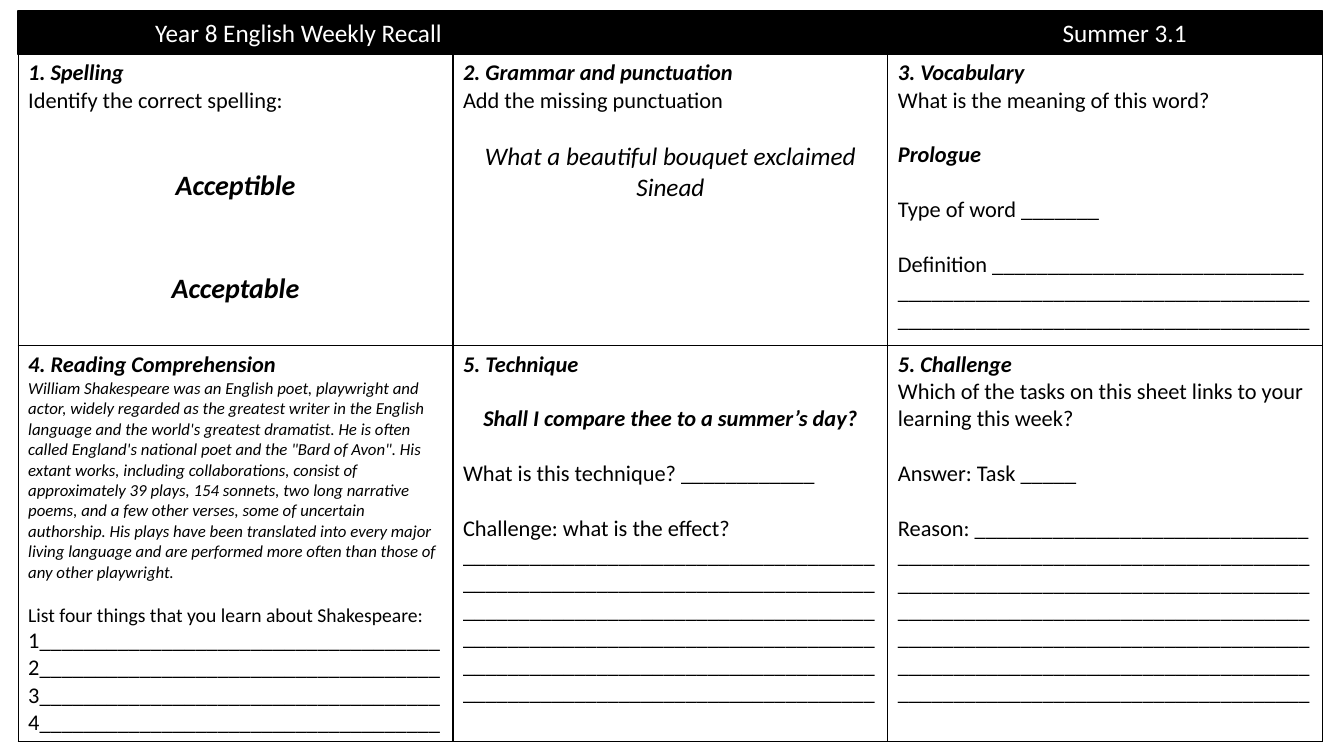
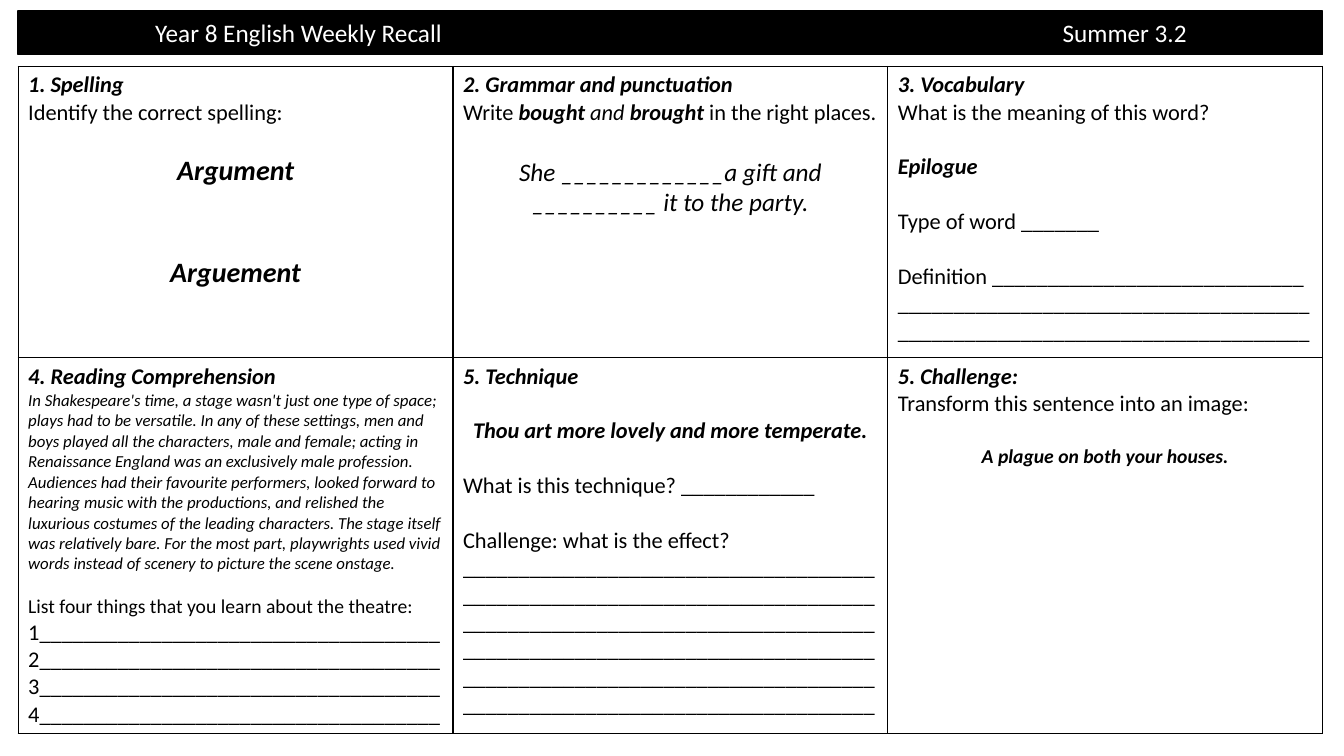
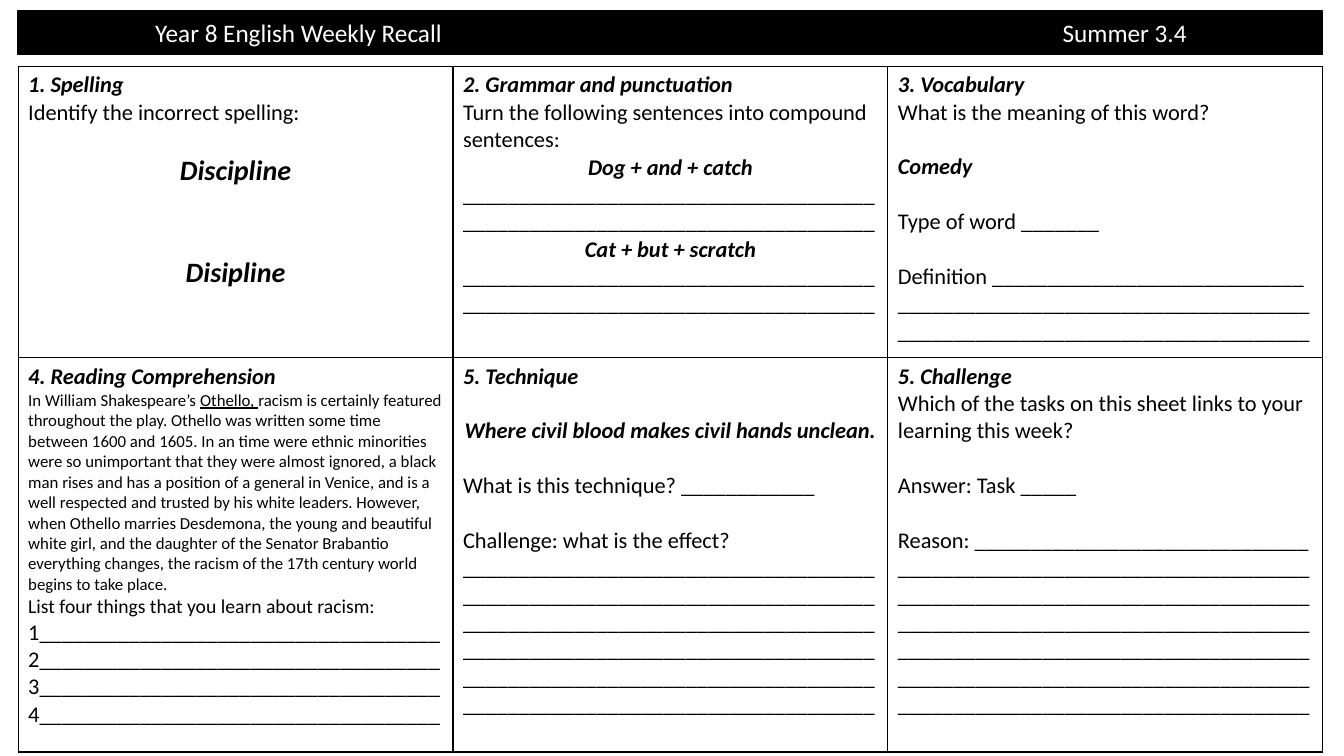
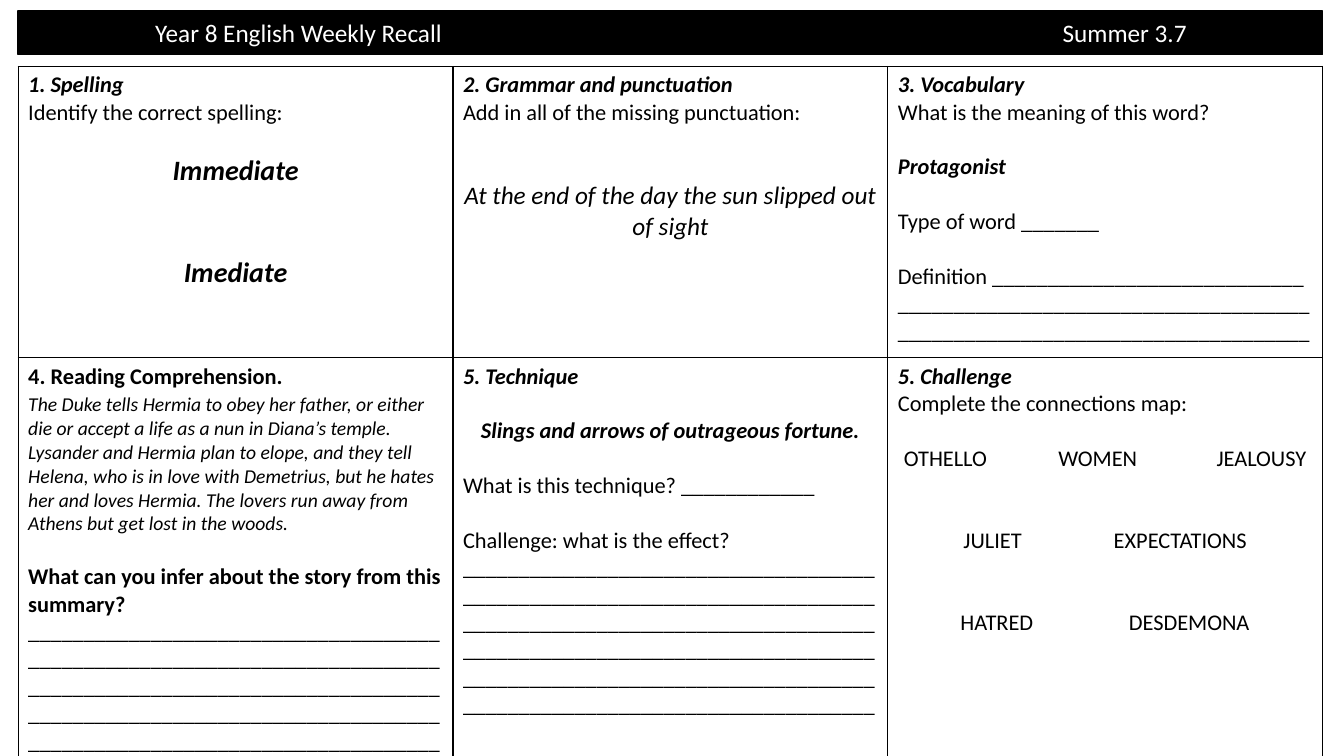
from dataclasses import dataclass

from lxml.etree import SubElement
from pptx import Presentation
from pptx.dml.color import RGBColor
from pptx.enum.text import MSO_ANCHOR, MSO_AUTO_SIZE, PP_ALIGN
from pptx.oxml.ns import qn
from pptx.util import Inches, Pt

FONT, BLACK, WHITE = "Calibri", "000000", "FFFFFF"
LEFT, TOP, WIDTH, BAND = 0.18, 0.11, 12.94, 0.43
COLS, TOP_ROW = 3, 2.89
LEADING = 1.22
GAP = 16 * LEADING
RULE = "_" * 37


@dataclass
class Line:
    """One paragraph; pieces pair text with style letters b, i and u."""
    pieces: list
    size: int = 16
    gap: float = 0
    center: bool = False
    tabs: tuple = ()


def line(text, style="", **options):
    """Make a paragraph in a single style."""
    return Line([(text, style)], **options)


def rgb(value):
    """Turn a hex string into a colour."""
    return RGBColor.from_string(value)


def set_font(font, size, color):
    """Apply the shared typeface with a size and colour."""
    font.name, font.size = FONT, Pt(size)
    font.color.rgb = rgb(color)


def add_tabs(p, stops):
    """Give a paragraph left tab stops, in inches."""
    tabs = SubElement(p._p.get_or_add_pPr(), qn("a:tabLst"))
    for stop in stops:
        SubElement(tabs, qn("a:tab"), pos=str(Inches(stop)), algn="l")


def write(p, item, color=BLACK):
    """Fill one paragraph from a Line."""
    p.alignment = PP_ALIGN.CENTER if item.center else PP_ALIGN.LEFT
    p.space_before = Pt(round(item.gap, 1))
    if item.tabs:
        add_tabs(p, item.tabs)
    set_font(p.font, item.size, color)
    for text, style in item.pieces:
        r = p.add_run()
        r.text = text
        set_font(r.font, item.size, color)
        r.font.bold, r.font.italic = "b" in style, "i" in style
        if "u" in style:
            r.font.underline = True


def add_borders(cell):
    """Draw the four thin black edges of a cell."""
    props = cell._tc.get_or_add_tcPr()
    for i, side in enumerate(("lnL", "lnR", "lnT", "lnB")):
        edge = props.makeelement(qn(f"a:{side}"), {"w": str(Pt(1))})
        fill = SubElement(edge, qn("a:solidFill"))
        SubElement(fill, qn("a:srgbClr"), val=BLACK)
        props.insert(i, edge)


def add_band(s, week):
    """Turn the title into the black band at the top."""
    sp = s.shapes.title
    sp.left, sp.top = Inches(LEFT), Inches(TOP)
    sp.width, sp.height = Inches(WIDTH), Inches(BAND)
    sp.fill.solid()
    sp.fill.fore_color.rgb = rgb(BLACK)
    sp.line.color.rgb = rgb(BLACK)
    sp.line.width = Pt(1)
    tf = sp.text_frame
    tf.word_wrap, tf.auto_size = True, MSO_AUTO_SIZE.NONE
    tf.vertical_anchor = MSO_ANCHOR.MIDDLE
    tf.margin_left = Inches(1.36)
    title = line(f"Year 8 English Weekly Recall\tSummer {week}", size=18, tabs=(9,))
    write(tf.paragraphs[0], title, WHITE)


def add_tasks(s, top, low_row, tasks):
    """Lay the six tasks out as a table of three columns."""
    heights = (TOP_ROW, low_row)
    table = s.shapes.add_table(len(heights), COLS, Inches(LEFT), Inches(top),
                               Inches(WIDTH), Inches(sum(heights))).table
    table.first_row = table.horz_banding = False
    for row, height in zip(table.rows, heights):
        row.height = Inches(height)
    for cell, lines in zip(table.iter_cells(), tasks):
        cell.fill.background()
        add_borders(cell)
        tf = cell.text_frame
        for i, item in enumerate(lines):
            write(tf.add_paragraph() if i else tf.paragraphs[0], item)


def spelling(first, second, kind="correct", gap=GAP):
    """Task 1: choose between two spellings."""
    return [line("1. Spelling", "bi"),
            line(f"Identify the {kind} spelling:"),
            line(first, "bi", size=20, gap=gap, center=True),
            line(second, "bi", size=20, gap=2 * 20 * LEADING, center=True)]


def grammar(*lines):
    """Task 2: a heading over its own lines."""
    return [line("2. Grammar and punctuation", "bi"), *lines]


def sentence(text, gap=GAP):
    """A large centred sentence to work on."""
    return line(text, "i", size=18, gap=gap, center=True)


def vocabulary(word):
    """Task 3: define a word."""
    return [line("3. Vocabulary", "bi"),
            line("What is the meaning of this word?"),
            line(word, "bi", gap=GAP),
            line("Type of word " + "_" * 7, gap=GAP),
            line("Definition " + "_" * 28 + " " + RULE * 2, gap=GAP)]


def reading(pieces, topic, gap=12 * LEADING):
    """Task 4: a passage and four numbered answers."""
    return [line("4. Reading Comprehension", "bi"),
            Line(pieces, size=12),
            line(f"List four things that you learn about {topic}:", size=14, gap=gap),
            *(line(f"{n}" + "_" * 36) for n in range(1, 5))]


def technique(quote):
    """Task 5: name the technique in a quotation."""
    return [line("5. Technique", "bi"),
            line(quote, "bi", gap=GAP, center=True),
            line("What is this technique? " + "_" * 12, gap=GAP),
            line("Challenge: what is the effect? " + RULE * 6, gap=GAP)]


def link_challenge():
    """Last task: link a task to the week's learning."""
    return [line("5. Challenge", "bi"),
            line("Which of the tasks on this sheet links to your learning this week?"),
            line("Answer: Task " + "_" * 5, gap=GAP),
            line("Reason: " + "_" * 30 + " " + RULE * 6, gap=GAP)]


def connections(*rows):
    """Last task: a map of words, each row with its tab stops."""
    return [line("5. Challenge", "bi"),
            line("Complete the connections map:"),
            *(line("".join(f"\t{word}" for word in words), tabs=stops,
                   gap=2 * GAP if i else GAP)
              for i, (words, stops) in enumerate(rows))]


SHAKESPEARE = (
    "William Shakespeare was an English poet, playwright and actor, widely regarded as "
    "the greatest writer in the English language and the world's greatest dramatist. He "
    "is often called England's national poet and the \"Bard of Avon\". His extant works, "
    "including collaborations, consist of approximately 39 plays, 154 sonnets, two long "
    "narrative poems, and a few other verses, some of uncertain authorship. His plays "
    "have been translated into every major living language and are performed more often "
    "than those of any other playwright.")
THEATRE = (
    "In Shakespeare's time, a stage wasn't just one type of space; plays had to be "
    "versatile. In any of these settings, men and boys played all the characters, male "
    "and female; acting in Renaissance England was an exclusively male profession. "
    "Audiences had their favourite performers, looked forward to hearing music with the "
    "productions, and relished the luxurious costumes of the leading characters. The "
    "stage itself was relatively bare. For the most part, playwrights used vivid words "
    "instead of scenery to picture the scene onstage.")
OTHELLO = (
    "racism is certainly featured throughout the play. Othello was written some time "
    "between 1600 and 1605. In an time were ethnic minorities were so unimportant that "
    "they were almost ignored, a black man rises and has a position of a general in "
    "Venice, and is a well respected and trusted by his white leaders. However, when "
    "Othello marries Desdemona, the young and beautiful white girl, and the daughter of "
    "the Senator Brabantio everything changes, the racism of the 17th century world "
    "begins to take place.")
HERMIA = (
    "The Duke tells Hermia to obey her father, or either die or accept a life as a nun "
    "in Diana’s temple. Lysander and Hermia plan to elope, and they tell Helena, who is "
    "in love with Demetrius, but he hates her and loves Hermia. The lovers run away from "
    "Athens but get lost in the woods.")

SHEETS = [
    ("3.1", 0.54, 3.93, [
        spelling("Acceptible", "Acceptable", gap=2 * GAP),
        grammar(line("Add the missing punctuation"),
                sentence("What a beautiful bouquet exclaimed Sinead")),
        vocabulary("Prologue"),
        reading([(SHAKESPEARE, "i")], "Shakespeare"),
        technique("Shall I compare thee to a summer’s day?"),
        link_challenge()]),
    ("3.2", 0.66, 3.73, [
        spelling("Argument", "Arguement"),
        grammar(Line([("Write ", ""), ("bought ", "bi"), ("and ", "i"),
                      ("brought ", "bi"), ("in the right places.", "")]),
                sentence("She " + "_" * 13 + "a gift and " + "_" * 10
                         + " it to the party.", gap=18 * LEADING)),
        vocabulary("Epilogue"),
        reading([(THEATRE, "i")], "the theatre"),
        technique("Thou art more lovely and more temperate."),
        [line("5. Challenge:", "bi"),
         line("Transform this sentence into an image:"),
         line("A plague on both your houses.", "bi", size=14, gap=GAP, center=True)]]),
    ("3.4", 0.66, 3.91, [
        spelling("Discipline", "Disipline", kind="incorrect"),
        grammar(line("Turn the following sentences into compound sentences:"),
                line("Dog + and + catch", "bi", center=True),
                line(RULE * 2),
                line("Cat + but + scratch", "bi", center=True),
                line(RULE * 2)),
        vocabulary("Comedy"),
        reading([("In William Shakespeare’s ", ""), ("Othello, ", "u"), (OTHELLO, "")],
                "racism", gap=0),
        technique("Where civil blood makes civil hands unclean."),
        link_challenge()]),
    ("3.7", 0.66, 3.93, [
        spelling("Immediate", "Imediate"),
        grammar(line("Add in all of the missing punctuation:"),
                sentence("At the end of the day the sun slipped out of sight", gap=2 * GAP)),
        vocabulary("Protagonist"),
        [line("4. Reading Comprehension.", "b"),
         line(HERMIA, "i", size=14, gap=2),
         line("What can you infer about the story from this summary?", "b", gap=GAP),
         line(RULE * 5)],
        technique("Slings and arrows of outrageous fortune."),
        connections((("OTHELLO", "WOMEN", "JEALOUSY"), (0.06, 1.59, 3.16)),
                    (("JULIET", "EXPECTATIONS"), (0.65, 2.14)),
                    (("HATRED", "DESDEMONA"), (0.62, 2.29)))]),
]


def main():
    """Build the weekly recall sheets."""
    prs = Presentation()
    prs.slide_width, prs.slide_height = Inches(13.33), Inches(7.5)
    for week, top, low_row, tasks in SHEETS:
        s = prs.slides.add_slide(prs.slide_layouts[5])
        add_tasks(s, top, low_row, tasks)
        add_band(s, week)
    prs.save("out.pptx")


if __name__ == "__main__":
    main()
